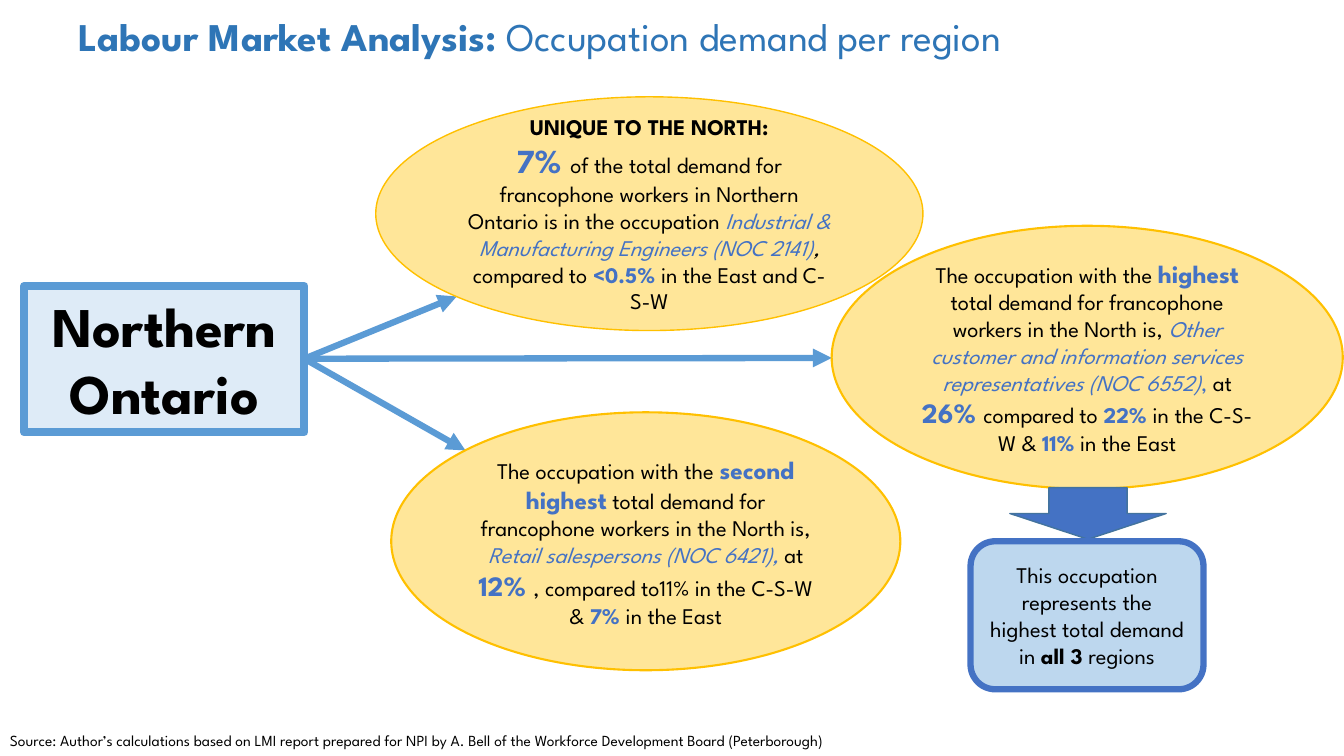
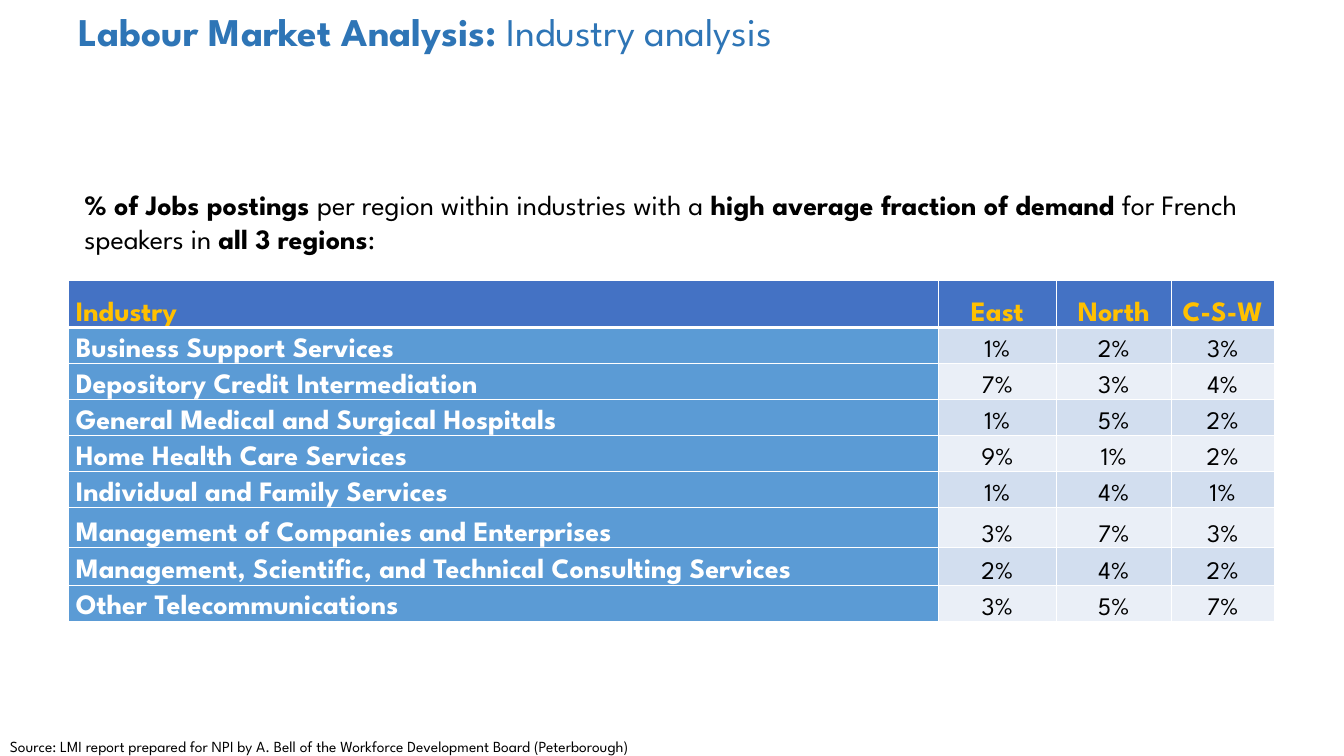
"""Build two labour market slides: occupation demand and industry analysis."""
from lxml.etree import SubElement
from pptx import Presentation
from pptx.dml.color import RGBColor
from pptx.enum.shapes import MSO_CONNECTOR, MSO_SHAPE
from pptx.enum.text import MSO_ANCHOR, PP_ALIGN
from pptx.oxml.ns import qn
from pptx.util import Cm, Pt

FONT = "League Spartan"
HUES = {
    "black": "000000", "white": "FFFFFF", "title": "2E75B6", "blue": "4472C4",
    "sky": "5B9BD5", "pale": "DEEBF7", "ice": "BDD7EE", "sand": "FFE699",
    "gold": "FFC000", "edge": "43739E", "odd": "D2DEEF", "even": "EAEFF7",
}
RGB = {name: RGBColor.from_string(code) for name, code in HUES.items()}

LOOKS = {
    "head": ("title", {"size": Pt(28), "bold": True}),
    "topic": ("title", {"size": Pt(28)}),
    "source": ("black", {"size": Pt(11)}),
    "region": ("black", {"size": Pt(40), "bold": True}),
    "body": ("black", {"size": Pt(16)}),
    "strong": ("black", {"size": Pt(16), "bold": True}),
    "slant": ("black", {"size": Pt(16), "italic": True}),
    "job": ("blue", {"size": Pt(16), "italic": True}),
    "comma": ("blue", {"size": Pt(16)}),
    "rate": ("blue", {"size": Pt(16), "bold": True}),
    "rank": ("blue", {"size": Pt(18), "bold": True}),
    "share": ("blue", {"size": Pt(20), "bold": True}),
    "lead": ("blue", {"size": Pt(24), "bold": True}),
    "intro": ("black", {"size": Pt(20)}),
    "key": ("black", {"size": Pt(20), "bold": True}),
    "column": ("gold", {"size": Pt(20), "bold": True}),
    "label": ("white", {"size": Pt(20), "bold": True}),
    "value": ("black", {"size": Pt(18)}),
}


def write(frame, paras, align=PP_ALIGN.LEFT, pitch=None):
    for at, runs in enumerate(paras):
        para = frame.paragraphs[0] if at == 0 else frame.add_paragraph()
        para.alignment = align
        para.line_spacing = pitch
        for text, look in runs:
            run = para.add_run()
            run.text = text
            hue, form = LOOKS[look]
            for name, value in {"name": FONT, **form}.items():
                setattr(run.font, name, value)
            run.font.color.rgb = RGB[hue]


def place(slide, spot, paras, kind=None, fill=None, line=None, width=0,
          anchor=MSO_ANCHOR.MIDDLE):
    area = [Cm(n) for n in spot]
    if kind is None:
        shape = slide.shapes.add_textbox(*area)
        anchor, align = MSO_ANCHOR.TOP, PP_ALIGN.LEFT
    else:
        shape = slide.shapes.add_shape(kind, *area)
        shape.shadow.inherit = False
        shape.fill.solid()
        shape.fill.fore_color.rgb = RGB[fill]
        shape.line.color.rgb = RGB[line]
        shape.line.width = Pt(width)
        align = PP_ALIGN.CENTER
    form = {"word_wrap": True, "vertical_anchor": anchor}
    for name, value in form.items():
        setattr(shape.text_frame, name, value)
    write(shape.text_frame, paras, align)


deck = Presentation()
deck.slide_width, deck.slide_height = Cm(33.87), Cm(19.05)

pages = []
for topic, top, source, base in [
    ("Occupation demand per region", 0.18,
     "Source: Author’s calculations based on LMI report prepared for NPI by "
     "A. Bell of the Workforce Development Board (Peterborough)", 18.31),
    ("Industry analysis", 0.05,
     "Source: LMI report prepared for NPI by A. Bell of the Workforce "
     "Development Board (Peterborough)", 18.44),
]:
    page = deck.slides.add_slide(deck.slide_layouts[6])
    place(page, (1.73, top, 29.67, 5.56),
          [[("Labour Market Analysis: ", "head"), (topic, "topic")]])
    place(page, (0, base, 33.15, 19.05 - base), [[(source, "source")]])
    pages.append(page)
demand, trade = pages

place(demand, (0.61, 7.21, 7.06, 3.68), [[("Northern Ontario", "region")]],
      MSO_SHAPE.RECTANGLE, "pale", "sky", 6, MSO_ANCHOR.TOP)

for x, y in [(11.51, 7.47), (20.96, 9.02), (11.73, 11.35)]:
    arrow = demand.shapes.add_connector(
        MSO_CONNECTOR.STRAIGHT, Cm(7.67), Cm(9.04), Cm(x), Cm(y))
    arrow.line.color.rgb = RGB["sky"]
    arrow.line.width = Pt(4.5)
    SubElement(arrow.line._get_or_add_ln(), qn("a:tailEnd"), type="triangle")
    SubElement(arrow._element.spPr, qn("a:effectLst"))

unique = [
    [("UNIQUE TO THE NORTH:", "strong")],
    [("7% ", "lead"),
     ("of the total demand for francophone workers in Northern Ontario is in "
      "the occupation ", "body"),
     ("Industrial & Manufacturing Engineers (NOC 2141)", "job"),
     (", ", "slant"), ("compared to ", "body"), ("<0.5% ", "rate"),
     ("in the East and C-S-W", "body")],
]
first = [[
    ("The occupation with the ", "body"), ("highest", "rank"),
    (" total demand for francophone workers in the North is, ", "body"),
    ("Other customer and information services representatives (NOC 6552)",
     "job"),
    (", ", "comma"), ("at ", "body"), ("26% ", "share"),
    ("compared to ", "body"), ("22% ", "rate"), ("in the C-S-W & ", "body"),
    ("11%", "rate"), (" in the East", "body"),
]]
second = [[
    ("The occupation with the ", "body"), ("second highest", "rank"),
    (" total demand for francophone workers in the North is, ", "body"),
    ("Retail salespersons (NOC 6421), ", "job"), ("at ", "body"),
    ("12% ", "share"), (", compared to11% in the C-S-W & ", "body"),
    ("7% ", "rate"), ("in the East", "body"),
]]
for spot, paras, width in [
    ((9.47, 2.44, 13.79, 5.89), unique, 1),
    ((20.96, 5.69, 12.88, 6.63), first, 1.5),
    ((9.86, 10.39, 12.83, 6.5), second, 1.5),
]:
    place(demand, spot, paras, MSO_SHAPE.OVAL, "sand", "gold", width)

place(demand, (25.45, 12.29, 3.94, 1.3), [], MSO_SHAPE.DOWN_ARROW,
      "blue", "edge", 1)
place(demand, (24.46, 13.64, 5.87, 3.73),
      [[("This occupation represents the highest total demand in ", "body"),
        ("all 3 ", "strong"), ("regions", "body")]],
      MSO_SHAPE.ROUNDED_RECTANGLE, "ice", "blue", 4.5)

place(trade, (1.88, 4.6, 30.07, 4.27), [[
    ("% of Jobs postings ", "key"),
    ("per region within industries with a ", "intro"),
    ("high average fraction of demand", "key"),
    (" for French speakers in ", "intro"), ("all 3 regions", "key"),
    (":", "intro"),
]])

rows = [
    ("Industry", "East", "North", "C-S-W"),
    ("Business Support Services", "1%", "2%", "3%"),
    ("Depository Credit Intermediation", "7%", "3%", "4%"),
    ("General Medical and Surgical Hospitals", "1%", "5%", "2%"),
    ("Home Health Care Services", "9%", "1%", "2%"),
    ("Individual and Family Services", "1%", "4%", "1%"),
    ("Management of Companies and Enterprises", "3%", "7%", "3%"),
    ("Management, Scientific, and Technical Consulting Services",
     "2%", "4%", "2%"),
    ("Other Telecommunications", "3%", "5%", "7%"),
]
wide = [21.92, 2.97, 2.9, 2.59]
tall = [1.19] + [0.89] * 5 + [1.02, 0.94, 0.89]
grid = trade.shapes.add_table(len(rows), len(wide), Cm(1.73), Cm(7.06),
                              Cm(sum(wide)), Cm(sum(tall))).table
for col, size in zip(grid.columns, wide):
    col.width = Cm(size)
for row, size in zip(grid.rows, tall):
    row.height = Cm(size)

pad = {"margin_left": Cm(0.18), "margin_right": Cm(0.18), "margin_top": 0,
       "margin_bottom": 0, "vertical_anchor": MSO_ANCHOR.BOTTOM}
for r, texts in enumerate(rows):
    for c, text in enumerate(texts):
        cell = grid.cell(r, c)
        for name, value in pad.items():
            setattr(cell, name, value)
        if r == 0:
            look, fill = "column", "blue"
        elif c == 0:
            look, fill = "label", "sky"
        else:
            look, fill = "value", "odd" if r % 2 else "even"
        props = cell._tc.get_or_add_tcPr()
        for side in "LRTB":
            thick = (r, side) in [(0, "B"), (1, "T")]
            edge = SubElement(props, qn(f"a:ln{side}"),
                              w=str(Pt(3 if thick else 1)))
            paint = SubElement(edge, qn("a:solidFill"))
            SubElement(paint, qn("a:srgbClr"), val=HUES["white"])
        cell.fill.solid()
        cell.fill.fore_color.rgb = RGB[fill]
        write(cell.text_frame, [[(text, look)]],
              PP_ALIGN.CENTER if c else PP_ALIGN.LEFT, 1.07)

deck.save("out.pptx")
